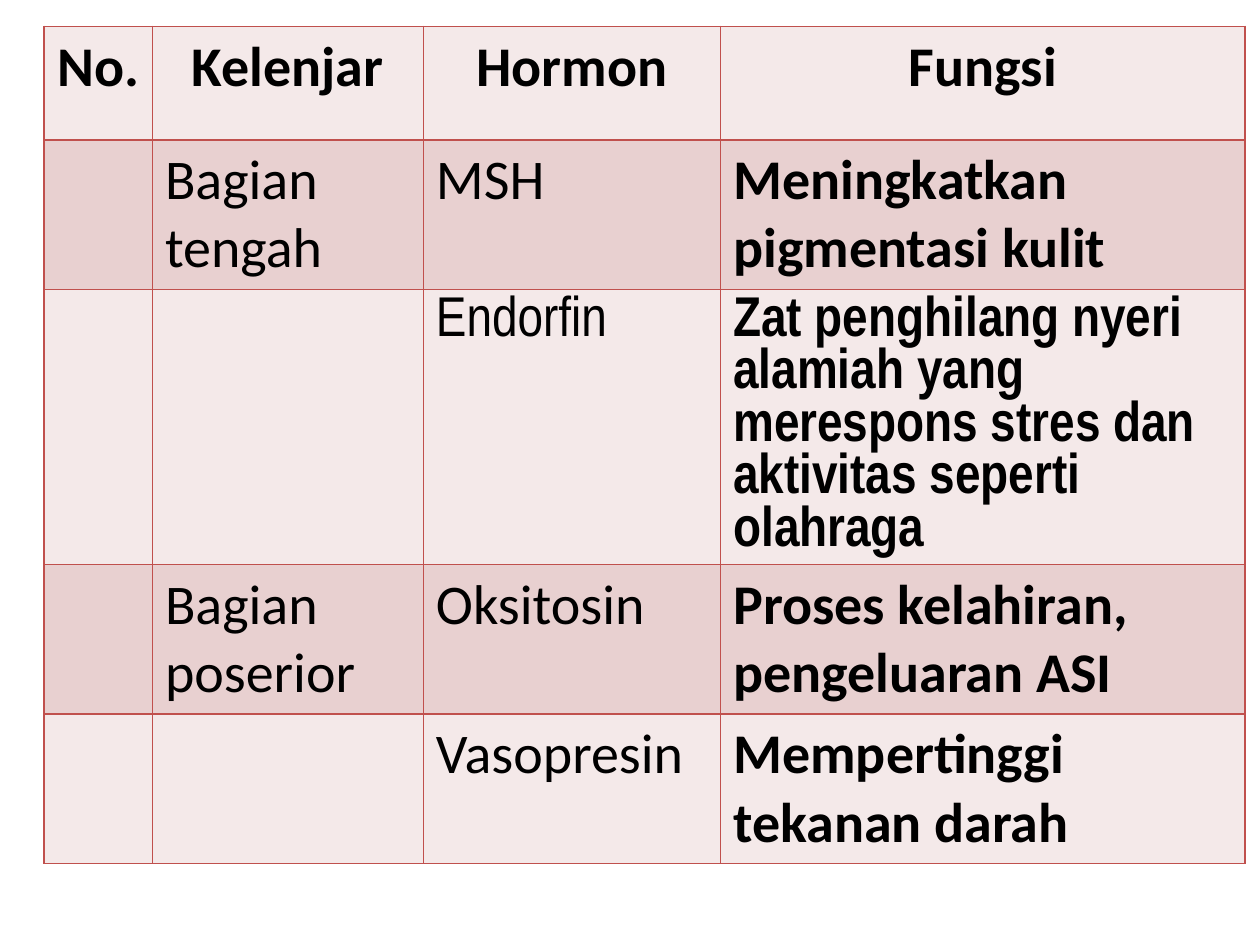
from dataclasses import dataclass

import pptx
import pptx.dml.color
import pptx.enum.text
import pptx.oxml.ns
import pptx.util
from lxml import etree

Inches = pptx.util.Inches


@dataclass(frozen=True)
class Theme:
    text: str = "000000"
    border: str = "C0504D"
    bands: tuple = ("F4E9E9", "E8D0D0")
    font: str = "Calibri"
    narrow_font: str = "Arial Narrow"
    text_size: int = 32
    border_width: int = 1


THEME = Theme()
COLUMN_WIDTHS = (0.86, 2.15, 2.36, 4.16)
ROW_HEIGHTS = (0.9, 0.9, 1.43, 0.9, 0.9)
ENDORPHIN_ROW = 2
FUNCTION_COLUMN = 3
ROWS = (
    ("No.", "Kelenjar", "Hormon", "Fungsi"),
    ("", "Bagian tengah", "MSH", "Meningkatkan pigmentasi kulit"),
    ("", "", "Endorfin", "Zat penghilang nyeri alamiah yang merespons stres "
                         "dan aktivitas seperti olahraga"),
    ("", "Bagian poserior", "Oksitosin", "Proses kelahiran, pengeluaran ASI"),
    ("", "", "Vasopresin", "Mempertinggi tekanan darah"),
)


def rgb(value):
    return pptx.dml.color.RGBColor.from_string(value)


def add_borders(cell):
    qn = pptx.oxml.ns.qn
    properties = cell._tc.get_or_add_tcPr()
    for side in ("lnL", "lnR", "lnT", "lnB"):
        line = etree.SubElement(properties, qn(f"a:{side}"),
                                w=str(pptx.util.Pt(THEME.border_width)))
        fill = etree.SubElement(line, qn("a:solidFill"))
        etree.SubElement(fill, qn("a:srgbClr"), val=THEME.border)


def fill_cell(cell, text, band, font_name, bold, centered):
    add_borders(cell)
    cell.fill.solid()
    cell.fill.fore_color.rgb = rgb(band)
    if not text:
        return
    paragraph = cell.text_frame.paragraphs[0]
    paragraph.text = text
    if centered:
        paragraph.alignment = pptx.enum.text.PP_ALIGN.CENTER
    font = paragraph.runs[0].font
    font.name = font_name
    font.size = pptx.util.Pt(THEME.text_size)
    font.bold = bold
    font.color.rgb = rgb(THEME.text)


def add_hormone_table(slide):
    table = slide.shapes.add_table(
        len(ROWS), len(COLUMN_WIDTHS), Inches(0.35), Inches(0.21),
        Inches(sum(COLUMN_WIDTHS)), Inches(sum(ROW_HEIGHTS))).table
    for column, width in zip(table.columns, COLUMN_WIDTHS):
        column.width = Inches(width)
    for row, height in zip(table.rows, ROW_HEIGHTS):
        row.height = Inches(height)
    for row_index, texts in enumerate(ROWS):
        is_header = row_index == 0
        band = THEME.bands[row_index % 2]
        font_name = THEME.narrow_font if row_index == ENDORPHIN_ROW else THEME.font
        for column_index, text in enumerate(texts):
            bold = is_header or column_index == FUNCTION_COLUMN
            fill_cell(table.cell(row_index, column_index), text, band,
                      font_name, bold, is_header)


def main():
    presentation = pptx.Presentation()
    presentation.slide_width = Inches(10)
    presentation.slide_height = Inches(7.5)
    slide = presentation.slides.add_slide(presentation.slide_layouts[6])
    add_hormone_table(slide)
    presentation.save("out.pptx")


if __name__ == "__main__":
    main()
